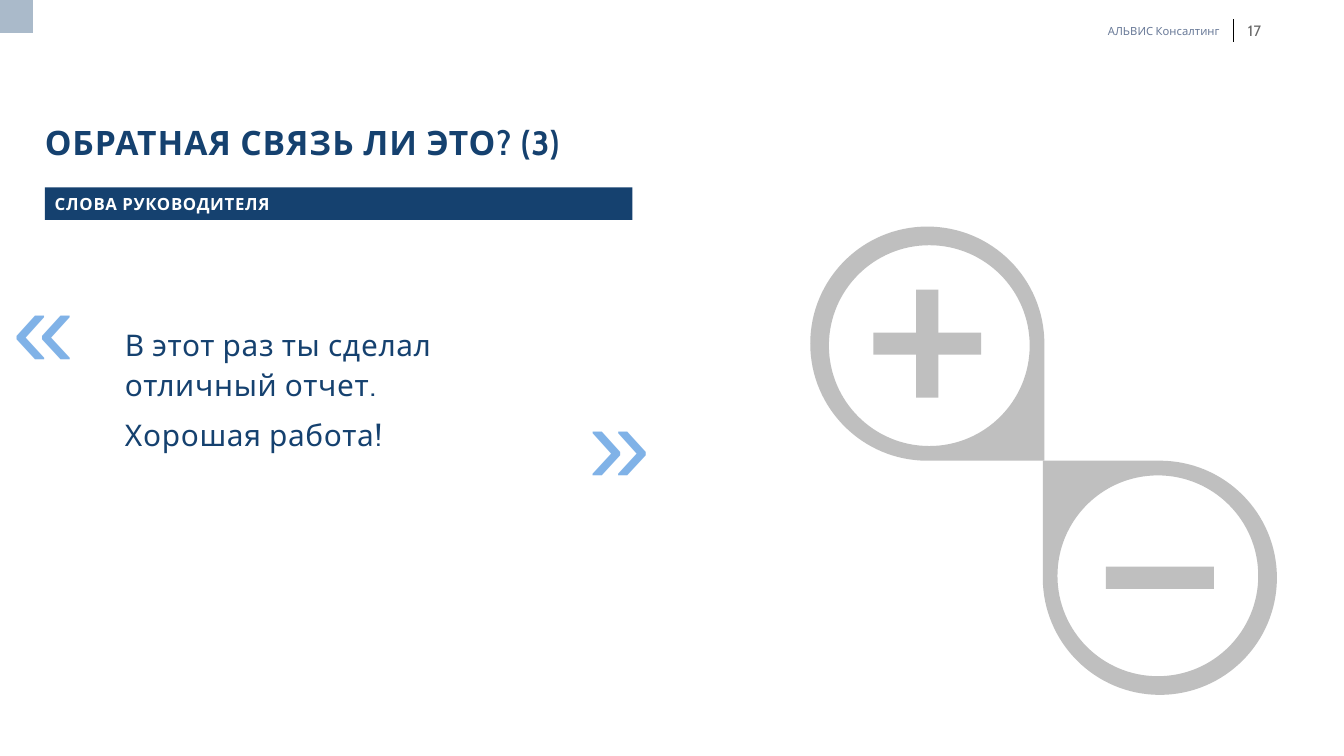
import math
from lxml import etree
from pptx import Presentation
from pptx.dml.color import RGBColor
from pptx.enum import shapes, text
from pptx.oxml.ns import qn
from pptx.util import Cm, Pt

NAVY = RGBColor(0x15, 0x41, 0x6F)
SKY = RGBColor(0x80, 0xB2, 0xE7)
STEEL = RGBColor(0xAA, 0xBA, 0xCA)
SLATE = RGBColor(0x69, 0x7A, 0x98)
GREY = RGBColor(0x66, 0x66, 0x66)
SILVER = RGBColor(0xBF, 0xBF, 0xBF)
BLACK = RGBColor(0x00, 0x00, 0x00)
WHITE = RGBColor(0xFF, 0xFF, 0xFF)

MIDDLE, BOTTOM = text.MSO_ANCHOR.MIDDLE, text.MSO_ANCHOR.BOTTOM
RIGHT, CENTER = text.PP_ALIGN.RIGHT, text.PP_ALIGN.CENTER
NBSP = chr(160)


def style_fill(sp, color):
    sp.shadow.inherit = False
    sp.fill.solid()
    sp.fill.fore_color.rgb = color
    sp.line.fill.background()


def add_block(slide, box, color):
    sp = slide.shapes.add_shape(shapes.MSO_SHAPE.RECTANGLE, *map(Cm, box))
    style_fill(sp, color)
    return sp


def write(sp, lines, size, color, font="Cabin", bold=False, spacing=0,
          inset=True, anchor=text.MSO_ANCHOR.TOP, para=None):
    tf = sp.text_frame
    frame = {"word_wrap": True, "vertical_anchor": anchor}
    if not inset:
        frame.update(dict.fromkeys(
            ("margin_left", "margin_top", "margin_right", "margin_bottom"), 0))
    for name, value in frame.items():
        setattr(tf, name, value)
    para = {"alignment": text.PP_ALIGN.LEFT, **(para or {})}
    for i, line in enumerate(lines):
        p = tf.paragraphs[0] if i == 0 else tf.add_paragraph()
        for name, value in para.items():
            setattr(p, name, value)
        r = p.add_run()
        r.text = line
        for name, value in {"name": font, "size": Pt(size), "bold": bold}.items():
            setattr(r.font, name, value)
        r.font.color.rgb = color
        if spacing:
            r._r.get_or_add_rPr().set("spc", str(round(spacing * 100)))


def add_text(slide, box, lines, size, color, **fmt):
    write(slide.shapes.add_textbox(*map(Cm, box)), lines, size, color, **fmt)


# Corner square, company name, divider and page number
def add_header(slide, x, y, w, h):
    add_block(slide, (x, y, 0.83, 0.83), STEEL)
    divider = x + w - 2.79
    line = slide.shapes.add_connector(
        shapes.MSO_CONNECTOR.STRAIGHT,
        *map(Cm, (divider, y + 0.48, divider, y + h)))
    line.line.color.rgb = BLACK
    line.line.width = Pt(0.5)
    etree.SubElement(line._element.spPr, qn("a:effectLst"))
    add_text(slide, (divider - 3.82, y + 0.61, 3.48, 0.33), ["АЛЬВИС Консалтинг"],
             8, SLATE, inset=False, anchor=MIDDLE, para={"alignment": RIGHT})
    add_text(slide, (divider, y + 0.61, 1.07, 0.33), ["17"], 10.7, GREY,
             spacing=0.4, inset=False, anchor=MIDDLE, para={"alignment": CENTER})


# Title above a coloured subtitle bar
def add_heading(slide, x, y, w, h):
    add_text(slide, (x, y, w, 1.02), ["ОБРАТНАЯ СВЯЗЬ ЛИ ЭТО? (3)"], 24, NAVY,
             bold=True, spacing=0.7, inset=False, anchor=BOTTOM)
    bar = add_block(slide, (x, y + h - 0.82, w, 0.82), NAVY)
    write(bar, ["СЛОВА РУКОВОДИТЕЛЯ"], 12, WHITE, bold=True, spacing=0.5, anchor=MIDDLE)


# Quotation between two large guillemets
def add_quote(slide, x, y, w, h):
    mark_w, mark_h = 2.31, 3.68
    marks = (("«", x, y), ("»", x + w - mark_w, y + h - mark_h))
    for mark, left, top in marks:
        add_text(slide, (left, top, mark_w, mark_h), [mark], 80, SKY, font="Arial",
                 spacing=0.4, para={"space_after": Pt(8)})
    add_text(slide, (x + 2.84, y + 1.71, 13.11, 3.56),
             [f"В этот раз ты сделал отличный{NBSP}отчет.", "Хорошая работа!"],
             21.3, NAVY, spacing=0.55,
             para={"line_spacing": 1.1, "space_after": Pt(8)})


# Start point, then two control points and an end point per quarter turn
def arc(cx, cy, radius, start, quarters, turn=1):
    handle = 0.5523 * turn
    points = [(1, 0)]
    for _ in range(quarters):
        a, b = points[-1]
        c, d = -b * turn, a * turn
        k = abs(handle)
        points += [(a + k * c, b + k * d), (c + k * a, d + k * b), (c, d)]
    cos, sin = math.cos(math.radians(start)), math.sin(math.radians(start))
    return [(Cm(cx + radius * (a * cos - b * sin)), Cm(cy + radius * (a * sin + b * cos)))
            for a, b in points]


# Each run of three line points becomes one curve; a spare point stays a line
def curve_outline(sp):
    path = next(sp._element.iter(qn("a:path")))
    lines = []
    for node in list(path):
        lines = lines + [node] if node.tag == qn("a:lnTo") else []
        if len(lines) == 3:
            curve = etree.Element(qn("a:cubicBezTo"))
            lines[0].addprevious(curve)
            for line in lines:
                curve.append(line[0])
                path.remove(line)
            lines = []


# Ring with one square corner (1: lower right, -1: upper left) and a sign inside
def add_sign(slide, x, y, size, corner, is_plus):
    radius, hole = size / 2, 2.53
    cx, cy = x + radius, y + radius
    shift = 0.05 * corner
    outer = arc(cx, cy, radius, 90 * corner, 3)
    outer.append((Cm(cx + radius * corner), Cm(cy + radius * corner)))
    inner = arc(cx + shift, cy + shift, hole, 0, 4, turn=-1)
    fb = slide.shapes.build_freeform(*outer[0])
    fb.add_line_segments(outer[1:])
    fb.move_to(*inner[0])
    fb.add_line_segments(inner[1:])
    ring = fb.convert_to_shape()
    curve_outline(ring)
    style_fill(ring, SILVER)

    length, thick = 2.72, 0.56
    bars = [(length, thick)] + ([(thick, length)] if is_plus else [])
    for w, h in bars:
        add_block(slide, (cx - w / 2, cy - h / 2, w, h), SILVER)


# Plus and minus rings that meet corner to corner
def add_plus_minus(slide, x, y, w, h):
    size = 5.9
    add_sign(slide, x, y, size, 1, True)
    add_sign(slide, x + w - size, y + h - size, size, -1, False)


def main():
    prs = Presentation()
    prs.slide_width, prs.slide_height = Cm(33.87), Cm(19.05)
    slide = prs.slides.add_slide(prs.slide_layouts[6])
    add_header(slide, 0, 0, 33.87, 1.07)
    add_heading(slide, 1.13, 3.07, 14.81, 2.47)
    add_plus_minus(slide, 20.42, 5.71, 11.76, 11.8)
    add_quote(slide, 0.06, 6.32, 16.82, 6.61)
    prs.save("out.pptx")


if __name__ == "__main__":
    main()
